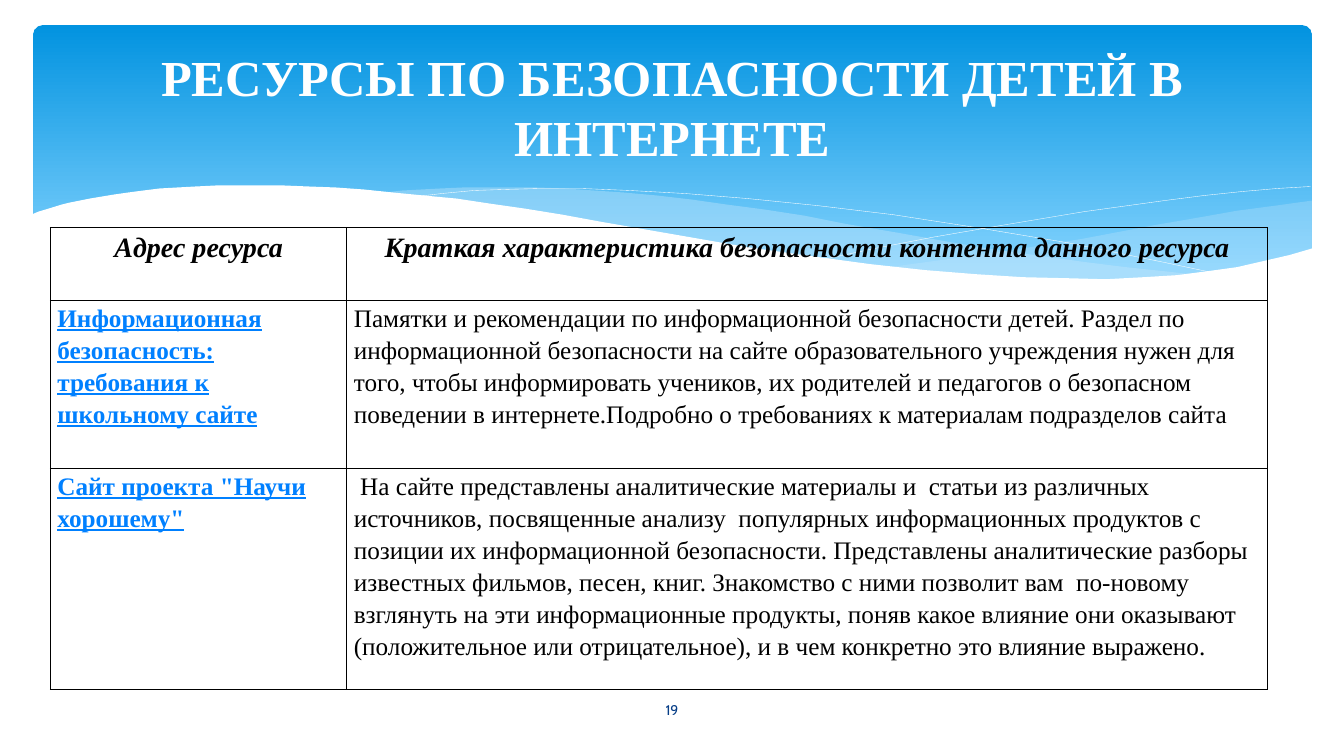
from dataclasses import dataclass

from lxml import etree
from pptx import Presentation
from pptx.dml.color import RGBColor
from pptx.enum.shapes import MSO_SHAPE
from pptx.enum.text import MSO_ANCHOR, PP_ALIGN
from pptx.oxml.ns import qn
from pptx.util import Inches, Pt

ROUNDED = MSO_SHAPE.ROUNDED_RECTANGLE
MIDDLE = MSO_ANCHOR.MIDDLE
CENTER, LEFT = PP_ALIGN.CENTER, PP_ALIGN.LEFT
TITLE_ONLY = 5


@dataclass(frozen=True)
class Theme:
    banner_top: str = "0293E0"
    banner_bottom: str = "83D3FE"
    wave: str = "C6E7FC"
    white: str = "FFFFFF"
    ink: str = "000000"
    link: str = "0080FF"
    number: str = "073E87"
    serif: str = "Times New Roman"
    sans: str = "Cabin"
    title_size: int = 36
    header_size: int = 20
    body_size: int = 18
    number_size: int = 10


THEME = Theme()

# Wave outlines in hundredths of an inch, relative to the banner corner (0.33, 0.25)
RIGHT_WAVE = [(1268, 174), (1232, 179), (1194, 184), (1155, 191), (1114, 198), (1040, 212),
              (971, 223), (908, 232), (849, 240), (888, 244), (925, 247), (960, 250),
              (992, 252), (1023, 252), (1052, 253), (1080, 252), (1105, 251), (1130, 249),
              (1153, 247), (1174, 244), (1195, 240), (1214, 236), (1233, 232), (1268, 222)]
MIDDLE_WAVE = [(1157, 248), (1121, 244), (1083, 240), (1043, 235), (1000, 229), (956, 223),
               (908, 215), (858, 206), (805, 197), (765, 189), (726, 183), (688, 178),
               (653, 173), (619, 169), (586, 166), (556, 164), (527, 162), (499, 161),
               (473, 161), (449, 161), (426, 161), (404, 162), (366, 164), (349, 166),
               (398, 171), (450, 178), (506, 186), (566, 197), (621, 207), (673, 215),
               (722, 223), (769, 230), (813, 236), (854, 241), (893, 245), (930, 249),
               (965, 251), (997, 252), (1028, 253), (1057, 253), (1084, 253), (1110, 252),
               (1134, 250), (1157, 248)]
FALLING_LINE = [(380, 170), (405, 167), (437, 164), (466, 163), (502, 162), (544, 162),
                (592, 164), (647, 167), (709, 172), (778, 179), (853, 188), (937, 201),
                (1027, 216), (1125, 236), (1177, 247)]
RISING_LINE = [(785, 232), (837, 221), (894, 210), (964, 198), (1042, 185), (1122, 174),
               (1161, 169), (1199, 165), (1234, 162), (1267, 160)]
WHITE_WAVE = [(1270, 221), (1246, 228), (1220, 234), (1194, 240), (1165, 244), (1134, 248),
              (1101, 250), (1064, 252), (1025, 251), (982, 250), (935, 247), (885, 243),
              (830, 237), (771, 229), (707, 220), (638, 208), (563, 195), (525, 188),
              (488, 182), (453, 177), (420, 172), (388, 169), (357, 166), (328, 163),
              (300, 161), (273, 160), (249, 159), (225, 159), (202, 159), (181, 159),
              (161, 160), (143, 161), (125, 162), (109, 164), (94, 166), (80, 168),
              (68, 170), (56, 172), (46, 174), (36, 176), (28, 178), (15, 182), (5, 185),
              (-2, 188), (-2, 304), (1270, 304)]

TITLE = "РЕСУРСЫ ПО БЕЗОПАСНОСТИ ДЕТЕЙ В ИНТЕРНЕТЕ"
HEADERS = ("Адрес ресурса", "Краткая характеристика безопасности контента данного ресурса")
RESOURCES = [
    ("Информационная безопасность: требования к школьному сайте",
     "Памятки и рекомендации по информационной безопасности детей. Раздел по "
     "информационной безопасности на сайте образовательного учреждения нужен для того, "
     "чтобы информировать учеников, их родителей и педагогов о безопасном поведении в "
     "интернете.Подробно о требованиях к материалам подразделов сайта"),
    ("Сайт проекта \"Научи хорошему\"",
     " На сайте представлены аналитические материалы и  статьи из различных источников, "
     "посвященные анализу  популярных информационных продуктов с позиции их "
     "информационной безопасности. Представлены аналитические разборы известных фильмов, "
     "песен, книг. Знакомство с ними позволит вам  по-новому взглянуть на эти "
     "информационные продукты, поняв какое влияние они оказывают (положительное или "
     "отрицательное), и в чем конкретно это влияние выражено."),
]


def rgb(color):
    return RGBColor.from_string(color)


def style_text(para, size, color, name=THEME.serif, align=LEFT, bold=False, italic=False,
               underline=False):
    para.alignment = align
    font = para.font
    font.name, font.size, font.color.rgb = name, Pt(size), rgb(color)
    font.bold, font.italic, font.underline = bold, italic, underline


def add_wave(page, box, points, fill=None, opacity=100):
    """A filled outline, or an open white hairline when there is no fill."""
    left, top = box[:2]
    points = [(x + left * 100, y + top * 100) for x, y in points]
    builder = page.shapes.build_freeform(*points[0], scale=Inches(0.01))
    builder.add_line_segments(points[1:], close=fill is not None)
    wave = builder.convert_to_shape()
    wave.shadow.inherit = False
    if fill is None:
        wave.fill.background()
        wave.line.color.rgb = rgb(THEME.white)
        wave.line.width = Pt(0.25)
        return
    wave.line.fill.background()
    wave.fill.solid()
    wave.fill.fore_color.rgb = rgb(fill)
    if opacity < 100:
        color = wave.element.spPr.find(qn("a:solidFill"))[0]
        etree.SubElement(color, qn("a:alpha"), val=str(opacity * 1000))


def add_banner(page, box):
    banner = page.shapes.add_shape(ROUNDED, *map(Inches, box))
    banner.adjustments[0] = 0.034
    banner.shadow.inherit = False
    banner.line.fill.background()
    banner.fill.gradient()
    banner.fill.gradient_angle = 270
    stops = ((0, THEME.banner_top), (0.9, THEME.banner_bottom))
    for stop, (position, color) in zip(banner.fill.gradient_stops, stops):
        stop.position = position
        stop.color.rgb = rgb(color)

    add_wave(page, box, RIGHT_WAVE, THEME.wave, 29)
    add_wave(page, box, MIDDLE_WAVE, THEME.wave, 40)
    add_wave(page, box, FALLING_LINE)
    add_wave(page, box, RISING_LINE)
    add_wave(page, box, WHITE_WAVE, THEME.white)


def add_borders(cell):
    properties = cell._tc.get_or_add_tcPr()
    for index, side in enumerate(("lnL", "lnR", "lnT", "lnB")):
        line = etree.Element(qn(f"a:{side}"), w=str(Pt(1)))
        fill = etree.SubElement(line, qn("a:solidFill"))
        etree.SubElement(fill, qn("a:srgbClr"), val=THEME.ink)
        properties.insert(index, line)


def add_resource_table(page, box):
    rows = [HEADERS, *RESOURCES]
    table = page.shapes.add_table(len(rows), len(HEADERS), *map(Inches, box)).table
    table.first_row = table.horz_banding = False
    for column, width in zip(table.columns, (2.94, 9.13)):
        column.width = Inches(width)
    for row, height in zip(table.rows, (0.72, 1.67, 2.19)):
        row.height = Inches(height)

    header = dict(size=THEME.header_size, color=THEME.ink, align=CENTER, bold=True, italic=True)
    address = dict(size=THEME.body_size, color=THEME.link, bold=True, underline=True)
    summary = dict(size=THEME.body_size, color=THEME.ink)
    for row_index, texts in enumerate(rows):
        styles = (address, summary) if row_index else (header, header)
        for column_index, (text, style) in enumerate(zip(texts, styles)):
            cell = table.cell(row_index, column_index)
            cell.fill.background()
            cell.margin_left = cell.margin_right = Inches(0.07)
            cell.margin_top = cell.margin_bottom = 0
            cell.text = text
            para = cell.text_frame.paragraphs[0]
            para.line_spacing, para.space_after = 1.15, Pt(10)
            style_text(para, **style)
            add_borders(cell)


def place_title(page, box):
    title = page.shapes.title
    title.left, title.top, title.width, title.height = map(Inches, box)
    title.text_frame.text = TITLE
    title.text_frame.vertical_anchor = MIDDLE
    style_text(title.text_frame.paragraphs[0], THEME.title_size, THEME.white, align=CENTER,
               bold=True)
    # Bring the title in front of the banner
    title.element.getparent().append(title.element)


def add_page_number(page, box):
    frame = page.shapes.add_textbox(*map(Inches, box)).text_frame
    frame.word_wrap = True
    frame.vertical_anchor = MIDDLE
    frame.text = "19"
    style_text(frame.paragraphs[0], THEME.number_size, THEME.number, THEME.sans, CENTER)


def main():
    deck = Presentation()
    deck.slide_width, deck.slide_height = Inches(13.33), Inches(7.5)
    page = deck.slides.add_slide(deck.slide_layouts[TITLE_ONLY])
    add_banner(page, (0.33, 0.25, 12.68, 2.7))
    add_resource_table(page, (0.5, 2.26, 12.07, 4.58))
    place_title(page, (0.67, 0.37, 12, 1.37))
    add_page_number(page, (5.82, 6.84, 1.69, 0.4))
    deck.save("out.pptx")


if __name__ == "__main__":
    main()
